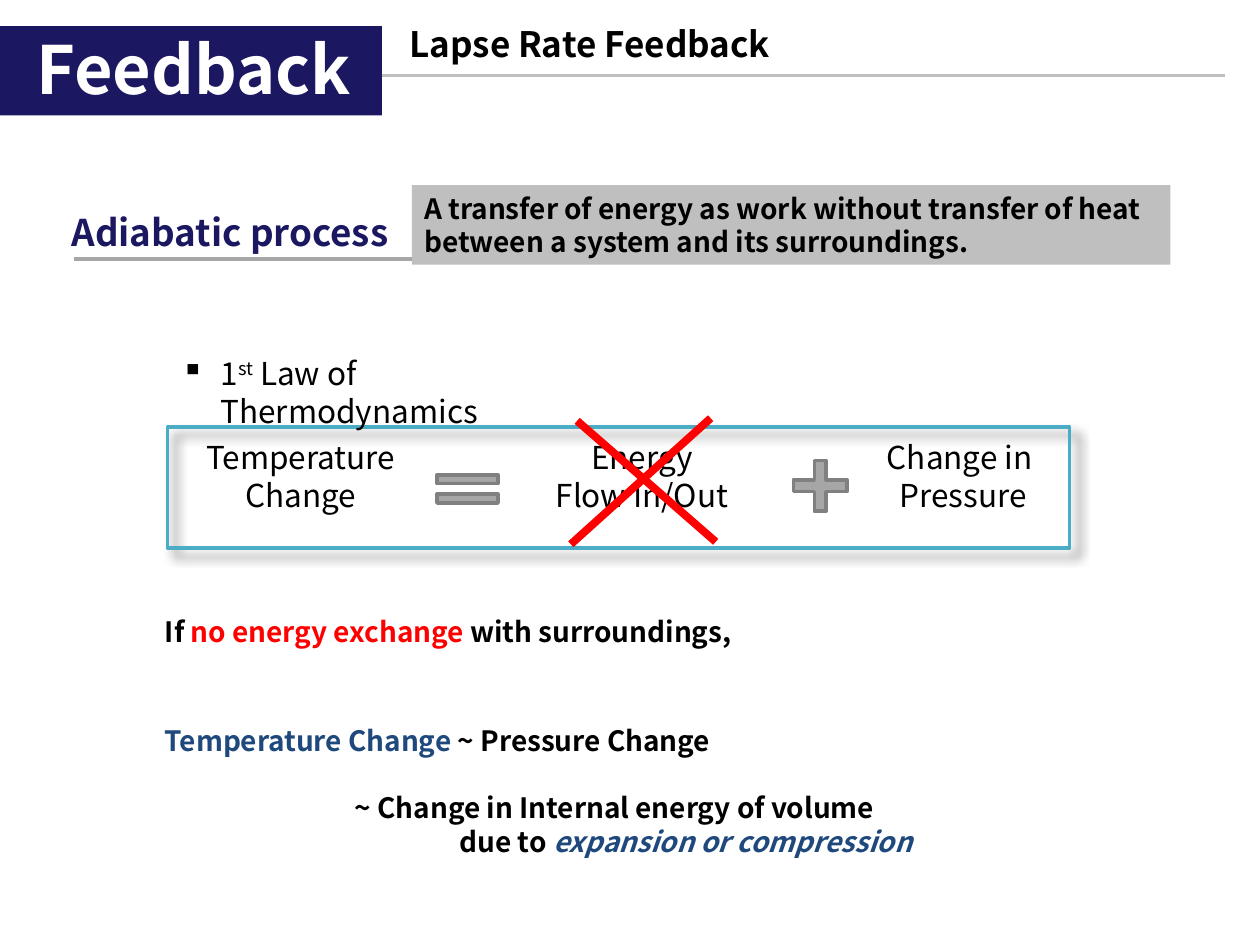
import pptx
import lxml.etree
from dataclasses import dataclass
from pptx.dml.color import RGBColor
from pptx.enum.shapes import MSO_CONNECTOR, MSO_SHAPE
from pptx.enum.text import PP_ALIGN
from pptx.oxml import parse_xml
from pptx.oxml.ns import qn
from pptx.util import Pt

A_NS = 'xmlns:a="http://schemas.openxmlformats.org/drawingml/2006/main"'


@dataclass(frozen=True)
class Theme:
    font: str = "Noto Sans CJK KR"
    black: str = "000000"
    white: str = "FFFFFF"
    navy: str = "1B1760"
    blue: str = "1F497D"
    red: str = "FF0000"
    teal: str = "4BACC6"
    light: str = "BFBFBF"
    grey: str = "A6A6A6"
    dark: str = "808080"
    banner: int = 38
    heading: int = 21
    title: int = 20
    body: int = 18
    note: int = 16


T = Theme()


def write(sp, text, size=T.body, color=T.black, bold=False, align=PP_ALIGN.LEFT,
          before=0, indent=0, hang=0, bullet=None):
    """Add a paragraph; text is a string or a list of (text, run format) pairs."""
    tf = sp.text_frame
    tf.word_wrap = True
    p = tf.paragraphs[0] if not tf.text else tf.add_paragraph()
    p.alignment = align
    p.space_before = Pt(before)
    pPr = p._p.get_or_add_pPr()
    pPr.set("marL", str(Pt(indent)))
    pPr.set("indent", str(Pt(-hang)))
    if bullet:
        pPr.append(parse_xml(f'<a:buChar {A_NS} char="{bullet}"/>'))
    for words, fmt in [(text, {})] if isinstance(text, str) else text:
        r = p.add_run()
        r.text = words
        r.font.name = T.font
        r.font.size = Pt(size)
        r.font.bold = bold
        r.font.italic = fmt.get("italic", False)
        r.font.color.rgb = RGBColor.from_string(fmt.get("color", color))
        if "raised" in fmt:
            r._r.get_or_add_rPr().set("baseline", str(fmt["raised"] * 1000))


prs = pptx.Presentation()
prs.slide_width, prs.slide_height = Pt(720), Pt(540)
s = prs.slides.add_slide(prs.slide_layouts[6])

# Shapes, back to front: name, preset, box, fill, line colour, line width
shapes = {}
for name, preset, box, fill, line, width in [
    ("banner", MSO_SHAPE.RECTANGLE, (0, 15, 218.2, 51), T.navy, None, 0),
    ("equals", MSO_SHAPE.MATH_EQUAL, (243.4, 254.2, 47.5, 50.4), T.grey, T.dark, 2),
    ("plus", MSO_SHAPE.MATH_PLUS, (447.8, 257.8, 41.8, 39.6), T.grey, T.dark, 2),
    ("equation", MSO_SHAPE.RECTANGLE, (95.8, 244.1, 515.5, 69.1), None, T.teal, 2),
    ("definition", MSO_SHAPE.RECTANGLE, (235.4, 105.8, 433.4, 45.4), T.light, None, 0),
]:
    sp = shapes[name] = s.shapes.add_shape(preset, *map(Pt, box))
    sp.shadow.inherit = False
    if fill:
        sp.fill.solid()
        sp.fill.fore_color.rgb = RGBColor.from_string(fill)
    else:
        sp.fill.background()
    if line:
        sp.line.color.rgb = RGBColor.from_string(line)
        sp.line.width = Pt(width)
    else:
        sp.line.fill.background()

shapes["equals"].adjustments[0] = 0.1
shapes["equals"].adjustments[1] = 0.12
shapes["plus"].adjustments[0] = 0.17
effects = shapes["equation"]._element.spPr.find(qn("a:effectLst"))
effects.append(parse_xml(
    f'<a:outerShdw {A_NS} blurRad="{Pt(6)}" dist="{Pt(6)}" dir="2700000" algn="tl" rotWithShape="0">'
    f'<a:srgbClr val="{T.black}"><a:alpha val="50000"/></a:srgbClr></a:outerShdw>'))

write(shapes["definition"],
      "A transfer of energy as work without transfer of heat between a system and its surroundings.",
      size=T.note, bold=True)

# Text boxes: box and its paragraphs
center = PP_ALIGN.CENTER
strong = dict(size=T.note, bold=True)
for box, paragraphs in [
    ((226.8, 9.4, 442, 31), [("Lapse Rate Feedback", dict(size=T.title, bold=True))]),
    ((10, 12.2, 201.6, 52.6),
     [("Feedback", dict(size=T.banner, color=T.white, bold=True, align=center))]),
    ((33.8, 116.6, 201.6, 32.4),
     [("Adiabatic process", dict(size=T.heading, color=T.navy, bold=True))]),
    ((96.5, 198.7, 263.5, 28),
     [([("1", {}), ("st", dict(raised=30)), (" Law of Thermodynamics", {})],
       dict(indent=22.5, hang=22.5, bullet="▪"))]),
    ((95.8, 247, 152, 50.4), [(t, dict(align=center)) for t in ("Temperature", "Change")]),
    ((293, 247, 147.6, 50.4), [(t, dict(align=center)) for t in ("Energy", "Flow In/Out")]),
    ((489.6, 247, 121.7, 50.4), [(t, dict(align=center)) for t in ("Change in ", "Pressure")]),
    ((87.1, 347.8, 553.7, 146.9), [
        ([("If ", {}), ("no energy exchange", dict(color=T.red)),
          (" with surroundings,", {})], strong),
        ([("Temperature Change", dict(color=T.blue)), (" ~ Pressure Change", {})],
         dict(strong, before=43)),
        ("~ Change in Internal energy of volume", dict(strong, before=19, indent=108.5)),
        ([("due to ", {}), ("expansion or compression", dict(color=T.blue, italic=True))],
         dict(strong, indent=168.5)),
    ]),
]:
    sp = s.shapes.add_textbox(*map(Pt, box))
    for text, fmt in paragraphs:
        write(sp, text, **fmt)

# Rules under the headings, then the cross over the energy term
for ends, color, width in [
    ((218.2, 43, 700, 43), T.light, 1.5),
    ((42.5, 148.2, 235.4, 148.2), T.grey, 2.25),
    ((326.2, 311, 406.1, 239), T.red, 4.5),
    ((329.8, 240.5, 409, 309.6), T.red, 4.5),
]:
    rule = s.shapes.add_connector(MSO_CONNECTOR.STRAIGHT, *map(Pt, ends))
    rule.line.color.rgb = RGBColor.from_string(color)
    rule.line.width = Pt(width)
    lxml.etree.SubElement(rule._element.spPr, qn("a:effectLst"))

prs.save("out.pptx")
